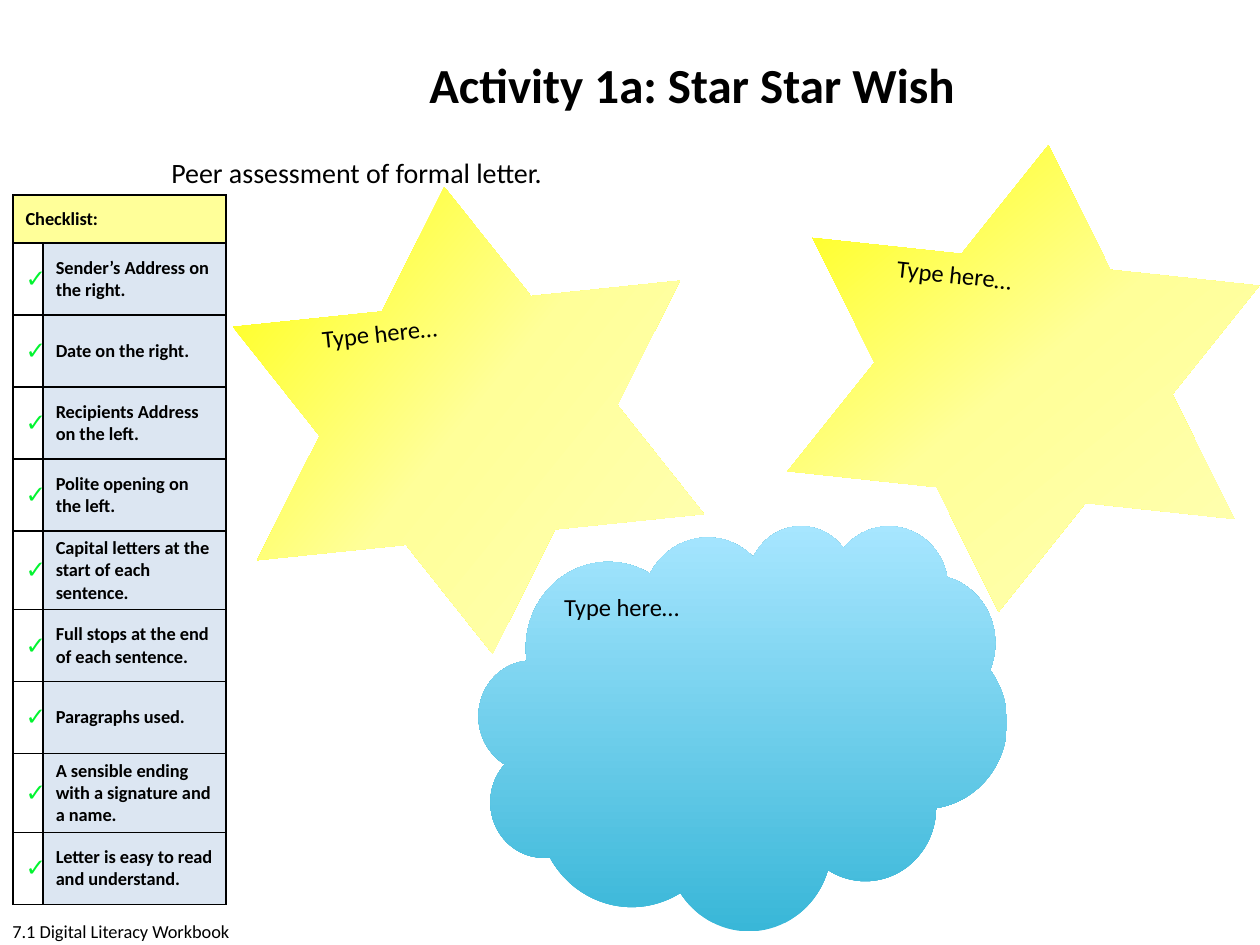
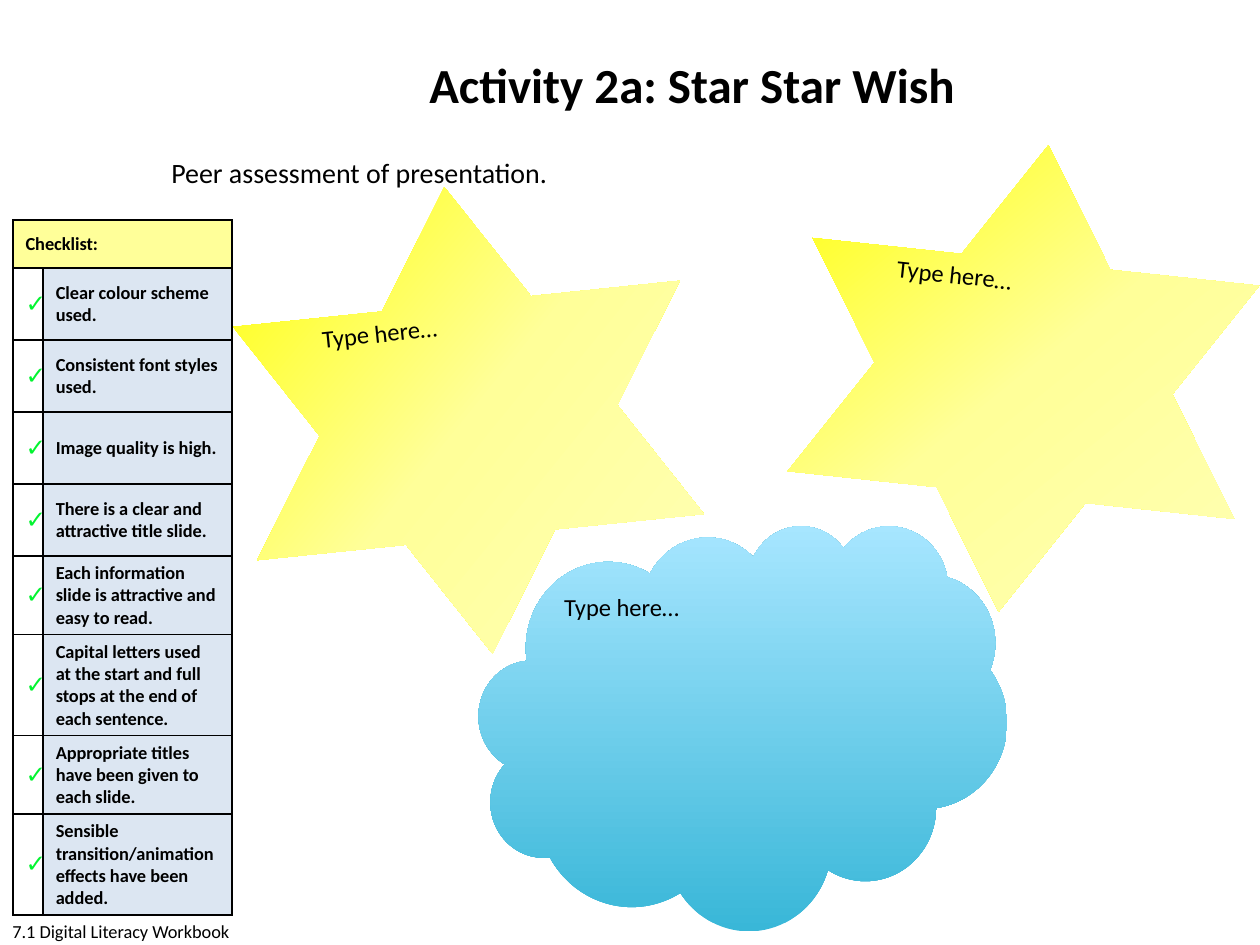
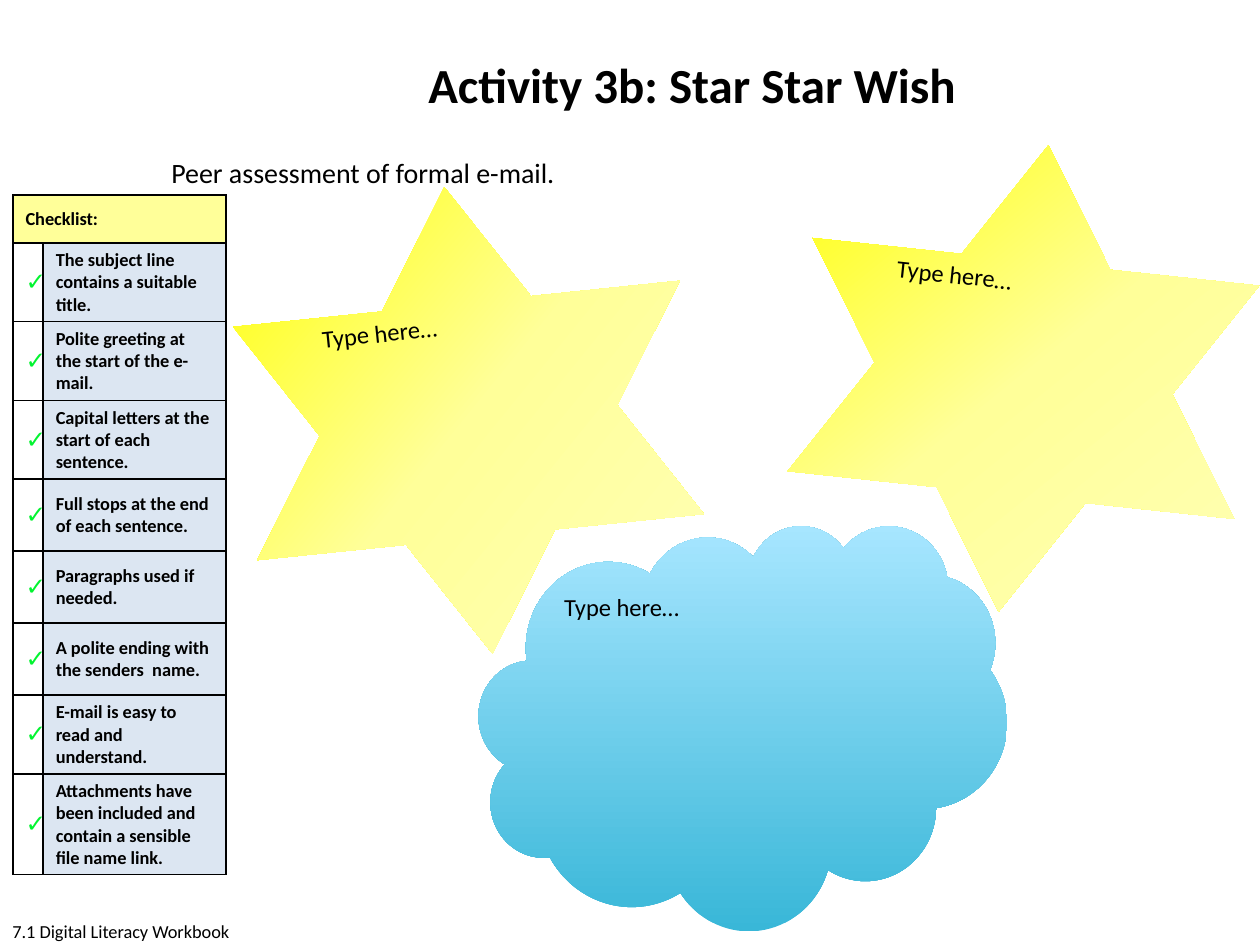
import pptx
import pptx.util
import pptx.dml.color
import pptx.enum.shapes
import pptx.enum.text
import pptx.oxml.ns
import lxml.etree

SLIDES = [
    {
        "title": "Activity 1a: Star Star Wish",
        "subtitle": "Peer assessment of formal letter.",
        "table_top": 195,
        "text_width": 183,
        "checklist": [
            "Sender’s Address on the right.",
            "Date on the right.",
            "Recipients Address on the left.",
            "Polite opening on the left.",
            "Capital letters at the start of each sentence.",
            "Full stops at the end of each sentence.",
            "Paragraphs used.",
            "A sensible ending with a signature and a name.",
            "Letter is easy to read and understand.",
        ],
    },
    {
        "title": "Activity 2a: Star Star Wish",
        "subtitle": "Peer assessment of presentation.",
        "table_top": 220,
        "text_width": 189,
        "checklist": [
            "Clear colour scheme used.",
            "Consistent font styles used.",
            "Image quality is high.",
            "There is a clear and attractive title slide.",
            "Each information slide is attractive and easy to read.",
            "Capital letters used at the start and full stops at the end of each sentence.",
            "Appropriate titles have been given to each slide.",
            "Sensible transition/animation effects have been added.",
        ],
    },
    {
        "title": "Activity 3b: Star Star Wish",
        "subtitle": "Peer assessment of formal e-mail.",
        "table_top": 195,
        "text_width": 183,
        "checklist": [
            "The subject line contains a suitable title.",
            "Polite greeting at the start of the e-mail.",
            "Capital letters at the start of each sentence.",
            "Full stops at the end of each sentence.",
            "Paragraphs used if needed.",
            "A polite ending with the senders  name.",
            "E-mail is easy to read and understand.",
            "Attachments have been included and contain a sensible file name link.",
        ],
    },
]
FOOTER = "7.1 Digital Literacy Workbook"
HEADING = "Checklist:"
TICK = "✓"
PROMPT = "Type here…"

FONT = "Calibri"
BLACK, WHITE, GREEN = "000000", "FFFFFF", "02F430"
HEADING_FILL, ITEM_FILL = "FFFF99", "DCE6F2"
STAR_STOPS = [(0, "FFFF00"), (50, "FFFF99"), (100, "FFFFB7")]
CLOUD_STOPS = [(0, "39B7D8"), (100, "A7E6FF")]

TITLE_BOX = (323, 48, 738, 72)
SUBTITLE_BOX = (159, 149, 712, 47)
FOOTER_BOX = (0, 915, 363, 32)
TABLE_LEFT, TICK_WIDTH = 13, 29
HEADING_HEIGHT, ITEM_HEIGHT = 48, 72

SHAPE = pptx.enum.shapes.MSO_SHAPE
ANCHOR = pptx.enum.text.MSO_ANCHOR
ALIGN = pptx.enum.text.PP_ALIGN
NOTES = [
    (SHAPE.STAR_6_POINT, (244, 186, 449, 469), 354.1, STAR_STOPS, 45),
    (SHAPE.CLOUD, (479, 525, 528, 405), 0, CLOUD_STOPS, 270),
    (SHAPE.STAR_6_POINT, (799, 144, 449, 469), 6.1, STAR_STOPS, 45),
]
qn = pptx.oxml.ns.qn


def px(n):
    return pptx.util.Emu(round(n * 914400 / 126))


def box(rect):
    return [px(n) for n in rect]


def color(value):
    return pptx.dml.color.RGBColor.from_string(value)


def write(tf, text, size, fill=BLACK, bold=False, align=ALIGN.LEFT, anchor=ANCHOR.TOP):
    tf.word_wrap = True
    tf.vertical_anchor = anchor
    p = tf.paragraphs[0]
    p.alignment = align
    r = p.add_run()
    r.text = text
    r.font.name = FONT
    r.font.size = pptx.util.Pt(size)
    r.font.bold = bold
    r.font.color.rgb = color(fill)


def add_text(slide, rect, text, size, **fmt):
    write(slide.shapes.add_textbox(*box(rect)).text_frame, text, size, **fmt)


def set_gradient(sp, stops, angle):
    sp.fill.gradient()
    sp.fill.gradient_angle = 360 - angle
    gs_list = sp._element.spPr.find(qn("a:gradFill")).find(qn("a:gsLst"))
    for gs in list(gs_list):
        gs_list.remove(gs)
    for pos, value in stops:
        gs = lxml.etree.SubElement(gs_list, qn("a:gs"), pos=str(pos * 1000))
        lxml.etree.SubElement(gs, qn("a:srgbClr"), val=value)


def add_note(slide, kind, rect, rotation, stops, angle):
    sp = slide.shapes.add_shape(kind, *box(rect))
    sp.rotation = rotation
    sp.shadow.inherit = False
    sp.line.fill.background()
    set_gradient(sp, stops, angle)
    write(sp.text_frame, PROMPT, 14)


def style_cell(cell, fill):
    tc_pr = cell._tc.get_or_add_tcPr()
    for side in ("lnL", "lnR", "lnT", "lnB"):
        ln = lxml.etree.SubElement(tc_pr, qn("a:" + side), w="12700")
        solid = lxml.etree.SubElement(ln, qn("a:solidFill"))
        lxml.etree.SubElement(solid, qn("a:srgbClr"), val=BLACK)
    cell.fill.solid()
    cell.fill.fore_color.rgb = color(fill)
    cell.vertical_anchor = ANCHOR.MIDDLE


def fill_cell(cell, text, size, **fmt):
    write(cell.text_frame, text, size, anchor=None, **fmt)


def add_checklist(slide, items, top, text_width):
    heights = [HEADING_HEIGHT] + [ITEM_HEIGHT] * len(items)
    rect = (TABLE_LEFT, top, TICK_WIDTH + text_width, sum(heights))
    table = slide.shapes.add_table(len(heights), 2, *box(rect)).table
    table.first_row = table.horz_banding = False
    for col, width in zip(table.columns, (TICK_WIDTH, text_width)):
        col.width = px(width)
    for row, height in zip(table.rows, heights):
        row.height = px(height)
    for i in range(len(heights)):
        fills = (WHITE, ITEM_FILL) if i else (HEADING_FILL, HEADING_FILL)
        for j, fill in enumerate(fills):
            style_cell(table.cell(i, j), fill)
    table.cell(0, 0).merge(table.cell(0, 1))
    fill_cell(table.cell(0, 0), HEADING, 10.5, bold=True)
    for i, item in enumerate(items, 1):
        fill_cell(table.cell(i, 0), TICK, 14, fill=GREEN, align=ALIGN.CENTER)
        fill_cell(table.cell(i, 1), item, 10.5, bold=True)


def add_slide(prs, content):
    slide = prs.slides.add_slide(prs.slide_layouts[5])
    add_text(slide, FOOTER_BOX, FOOTER, 10.5, anchor=ANCHOR.MIDDLE)
    title = slide.shapes.title
    title.left, title.top, title.width, title.height = box(TITLE_BOX)
    write(title.text_frame, content["title"], 28, bold=True, align=ALIGN.CENTER)
    add_text(slide, SUBTITLE_BOX, content["subtitle"], 16)
    for note in NOTES:
        add_note(slide, *note)
    add_checklist(slide, content["checklist"], content["table_top"], content["text_width"])


def main():
    prs = pptx.Presentation()
    prs.slide_width, prs.slide_height = px(1260), px(945)
    for content in SLIDES:
        add_slide(prs, content)
    prs.save("out.pptx")


if __name__ == "__main__":
    main()
